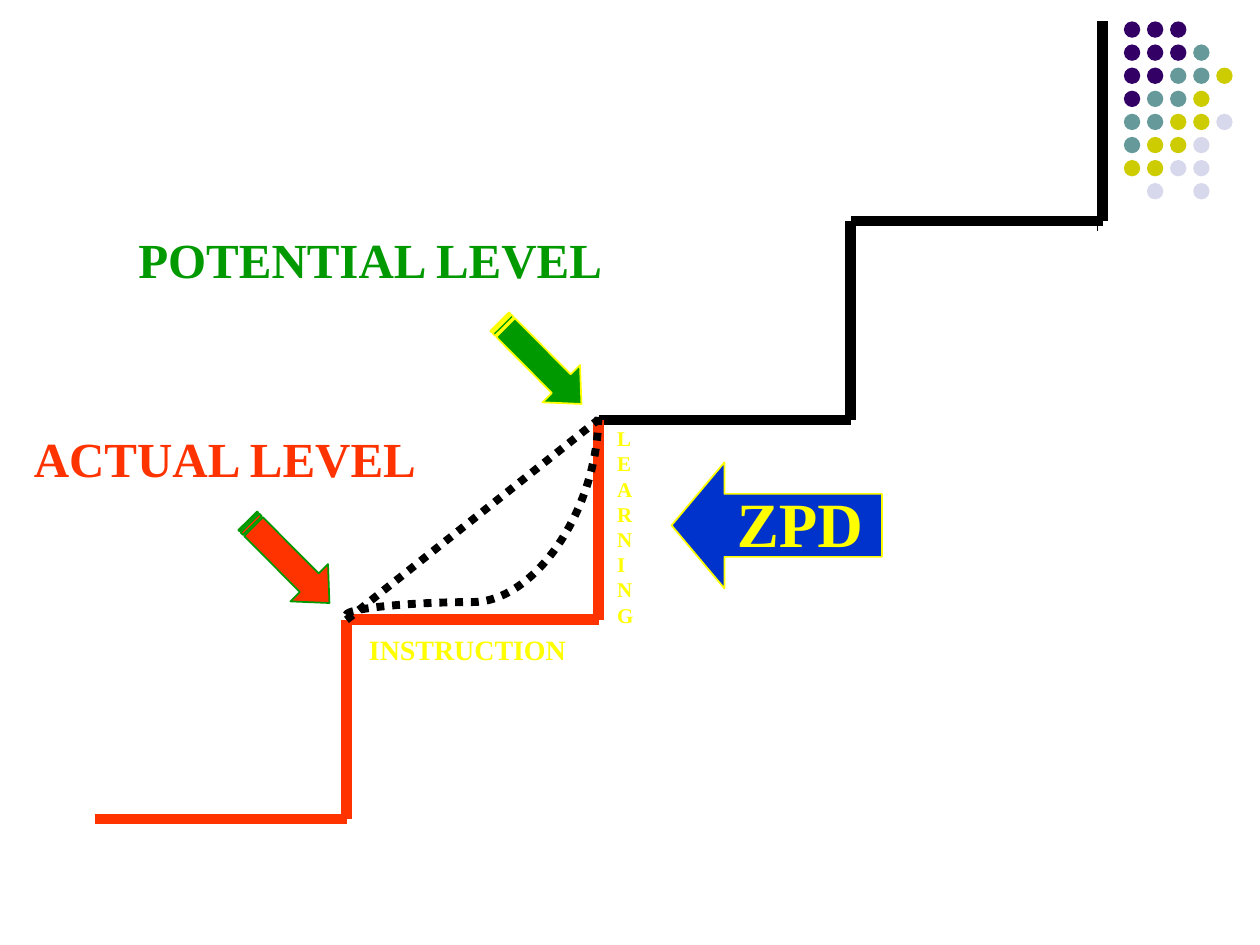
from dataclasses import dataclass

from lxml.etree import SubElement
from pptx import Presentation
from pptx.dml.color import RGBColor
from pptx.enum.dml import MSO_LINE
from pptx.enum.shapes import MSO_CONNECTOR, MSO_SHAPE
from pptx.enum.text import MSO_AUTO_SIZE
from pptx.oxml.ns import qn
from pptx.util import Inches, Pt


@dataclass(frozen=True)
class Theme:
    font: str = "Times New Roman"
    black: str = "000000"
    orange: str = "FF3300"
    green: str = "009900"
    yellow: str = "FFFF00"
    blue: str = "0033CC"
    purple: str = "330066"
    teal: str = "669999"
    olive: str = "CCCC00"
    lavender: str = "D8D8EC"
    level_size: int = 28
    instruction_size: int = 16
    learning_size: int = 12
    zpd_size: int = 36
    hairline: float = 0.75
    outline: float = 1
    step_line: float = 6
    path_line: float = 4.5


THEME = Theme()
DOT_ROWS = ["PPP", "PPPT", "PPTTO", "PTTO", "TTOOL", "TOOL", "OOLL", " L L"]
DOT_COLOURS = {"P": THEME.purple, "T": THEME.teal,
               "O": THEME.olive, "L": THEME.lavender}


def add_text(shapes, text, box, *, size, colour, bold=True):
    label = shapes.add_textbox(*map(Inches, box))
    frame = label.text_frame
    frame.word_wrap = True
    frame.auto_size = MSO_AUTO_SIZE.SHAPE_TO_FIT_TEXT
    run = frame.paragraphs[0].add_run()
    run.text = text
    run.font.name = THEME.font
    run.font.size = Pt(size)
    run.font.bold = bold
    run.font.color.rgb = RGBColor.from_string(colour)


def add_filled(shapes, kind, box, fill, outline=None):
    shape = shapes.add_shape(kind, *map(Inches, box))
    shape.shadow.inherit = False
    shape.fill.solid()
    shape.fill.fore_color.rgb = RGBColor.from_string(fill)
    if outline:
        shape.line.color.rgb = RGBColor.from_string(outline)
        shape.line.width = Pt(THEME.outline)
    else:
        shape.line.fill.background()
    return shape


def add_line(shapes, start, end, colour, width, *, dash=None,
             kind=MSO_CONNECTOR.STRAIGHT):
    line = shapes.add_connector(kind, *map(Inches, (*start, *end)))
    line.line.color.rgb = RGBColor.from_string(colour)
    line.line.width = Pt(width)
    if dash:
        line.line.dash_style = dash
    SubElement(line._element.spPr, qn("a:effectLst"))
    return line


def add_corner_dots(slide, left, top, height):
    """Place the vertical rule and the dot grid to the right of it."""
    add_line(slide.shapes, (left, top), (left, top + height),
             THEME.black, THEME.hairline)
    dots = slide.shapes.add_group_shape().shapes
    first, pitch, size = left + 0.21, 0.55 / 3, 0.13
    for row, codes in enumerate(DOT_ROWS):
        for column, code in enumerate(codes):
            if code in DOT_COLOURS:
                box = (first + column * pitch, top + row * pitch, size, size)
                add_filled(dots, MSO_SHAPE.OVAL, box, DOT_COLOURS[code])


def add_staircase(slide, left, top, width, height, steps=4, reached=2):
    """Draw rising steps; the lowest ones, already reached, are orange."""
    tread, riser = width / steps, height / steps
    # Upper steps go first so that the reached ones lie over the shared corner.
    for step in [*range(reached, steps), *range(reached)]:
        colour = THEME.orange if step < reached else THEME.black
        x, y = left + step * tread, top + height - step * riser
        corner = (x + tread, y)
        add_line(slide.shapes, (x, y), corner, colour, THEME.step_line)
        add_line(slide.shapes, corner, (x + tread, y - riser),
                 colour, THEME.step_line)


def add_level(slide, left, top, text, colour, outline):
    """Place a level name with its striped arrow down to the right."""
    add_text(slide.shapes, text, (left, top, 4, 0.57),
             size=THEME.level_size, colour=colour)


def add_level_arrow(slide, left, top, colour, outline):
    arrow = add_filled(slide.shapes, MSO_SHAPE.STRIPED_RIGHT_ARROW,
                       (left, top, 0.92, 0.42), colour, outline)
    arrow.rotation = 45.2
    arrow.adjustments[1] = 0.54


def add_learning_paths(slide, left, top, width, height):
    """Draw the straight and the curved dotted path across one step."""
    add_line(slide.shapes, (left, top + height), (left + width, top),
             THEME.black, THEME.path_line, dash=MSO_LINE.ROUND_DOT)
    # A quarter turn makes the curve leave and arrive vertically.
    middle_x, middle_y = left + width / 2, top - 0.04 + height / 2
    start = (middle_x - height / 2, middle_y - width / 2)
    end = (middle_x + height / 2, middle_y + width / 2)
    curve = add_line(slide.shapes, start, end, THEME.black, THEME.path_line,
                     dash=MSO_LINE.ROUND_DOT, kind=MSO_CONNECTOR.CURVE)
    properties = curve._element.spPr
    properties.find(qn("a:xfrm")).set("rot", str(270 * 60000))
    bend = properties.find(qn("a:prstGeom")).find(qn("a:avLst"))
    SubElement(bend, qn("a:gd"), name="adj1", fmla="val 6400")


def add_step_labels(slide, left, top, width, height):
    """Name the tread below it and the riser to its right."""
    add_text(slide.shapes, "INSTRUCTION",
             (left + 0.08, top + height + 0.05, width, 0.37),
             size=THEME.instruction_size, colour=THEME.yellow)
    # The box is as narrow as its margins, so each letter gets its own line.
    add_text(slide.shapes, "LEARNING", (left + width + 0.05, top, 0.2, 1.7),
             size=THEME.learning_size, colour=THEME.yellow)


def add_zpd_arrow(slide, left, top, width, height):
    zpd = slide.shapes.add_group_shape().shapes
    arrow = add_filled(zpd, MSO_SHAPE.LEFT_ARROW, (left, top, width, height),
                       THEME.blue, THEME.yellow)
    arrow.adjustments[1] = 0.42
    add_text(zpd, "ZPD", (left + 0.42, top + 0.13, 2.25, 0.7),
             size=THEME.zpd_size, colour=THEME.yellow)


def main():
    presentation = Presentation()
    presentation.slide_width = Inches(10)
    presentation.slide_height = Inches(7.5)
    slide = presentation.slides.add_slide(presentation.slide_layouts[6])

    learning_step = (2.75, 3.33, 2, 1.59)
    add_corner_dots(slide, 8.71, 0.17, 1.66)
    add_staircase(slide, 0.75, 0.17, 8, 6.33)
    add_level_arrow(slide, 1.83, 4.25, THEME.orange, THEME.green)
    add_level_arrow(slide, 3.83, 2.67, THEME.green, THEME.yellow)
    for text, left, top, colour in (
            ("POTENTIAL LEVEL", 1, 1.77, THEME.green),
            ("ACTUAL LEVEL", 0.17, 3.35, THEME.orange)):
        add_text(slide.shapes, text, (left, top, 4, 0.57),
                 size=THEME.level_size, colour=colour)
    add_step_labels(slide, *learning_step)
    add_zpd_arrow(slide, 5.33, 3.67, 1.67, 1)
    add_learning_paths(slide, *learning_step)
    presentation.save("out.pptx")


if __name__ == "__main__":
    main()
